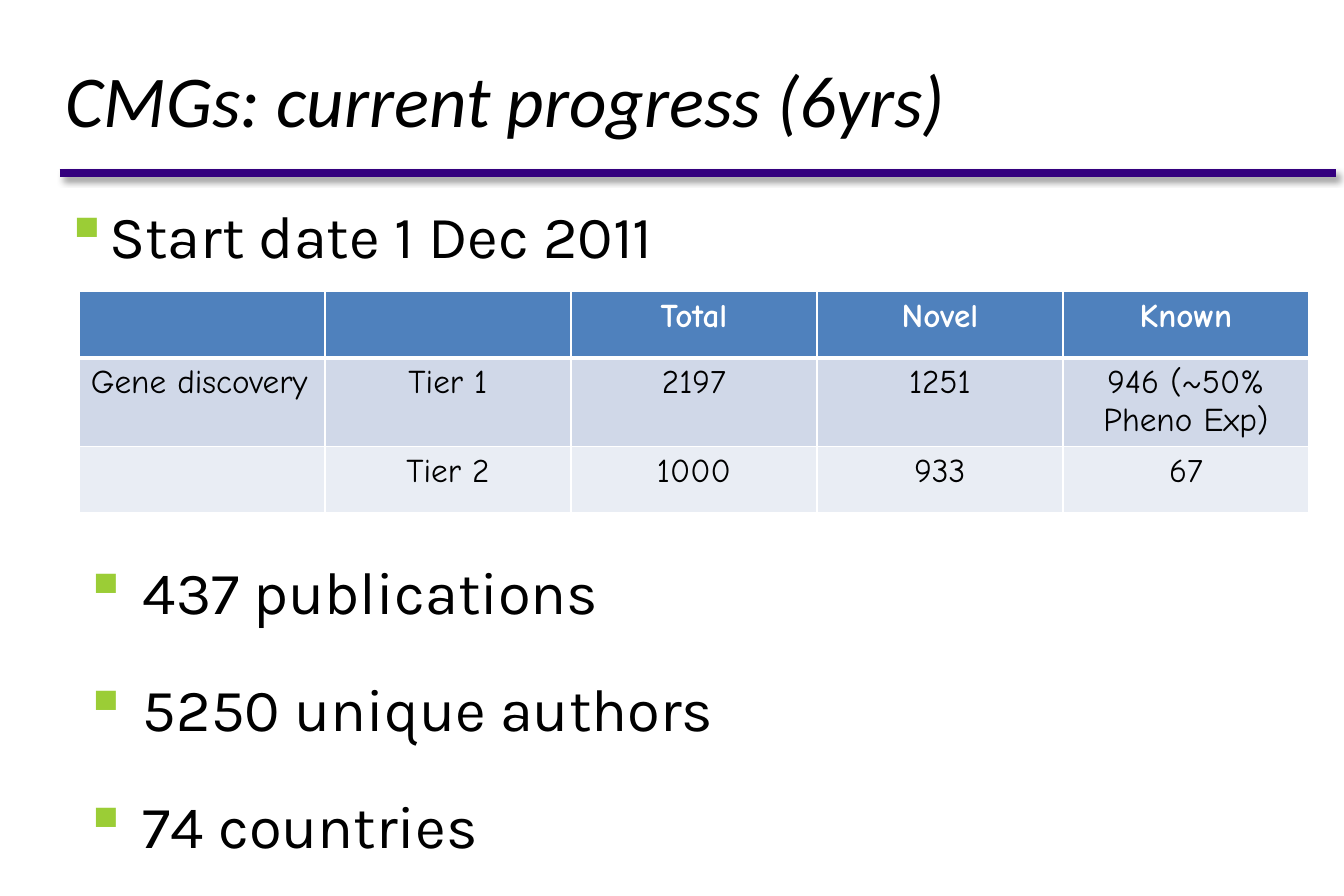
from dataclasses import dataclass
from typing import Any

import lxml.etree
import pptx
import pptx.dml.color
import pptx.enum.shapes
import pptx.enum.text
import pptx.oxml
import pptx.oxml.ns
import pptx.util

Pt = pptx.util.Pt
RGBColor = pptx.dml.color.RGBColor
Align = pptx.enum.text.PP_ALIGN
Anchor = pptx.enum.text.MSO_ANCHOR
qn = pptx.oxml.ns.qn

BLACK = RGBColor(0x00, 0x00, 0x00)
WHITE = RGBColor(0xFF, 0xFF, 0xFF)
RULE_PURPLE = RGBColor(0x34, 0x00, 0x7E)
BULLET_GREEN = RGBColor(0x9B, 0xCD, 0x36)
HEADER_BLUE = RGBColor(0x4F, 0x81, 0xBD)
TIER_1_BLUE = RGBColor(0xD0, 0xD8, 0xE8)
TIER_2_BLUE = RGBColor(0xE9, 0xED, 0xF4)

TITLE_FONT = {"name": "Calibri", "size": Pt(44), "italic": True}
BULLET_FONT = {"name": "Karla", "size": Pt(36)}
CELL_FONT = {"name": "Comic Neue", "size": Pt(20)}
BULLET_SPACING = {"line_spacing": Pt(42.6), "space_before": Pt(28)}
BULLET_HANG = 26.64
TABLE_LEFT, TABLE_TOP, COLUMN_WIDTH = 47.5, 175.7, 148.3


@dataclass(frozen=True)
class TextBlock:
    left: float
    top: float
    width: float
    height: float
    lines: tuple[str, ...]
    font: dict[str, Any]
    anchor: Any = Anchor.TOP
    bullet_indent: float = 0


@dataclass(frozen=True)
class TableRow:
    height: float
    fill: RGBColor
    texts: tuple[str, ...]
    color: RGBColor = BLACK
    bold: bool = False
    top_border: float = 1
    bottom_border: float = 1


TEXT_BLOCKS = (
    TextBlock(36, 14.4, 774, 90, ("CMGs: current progress (6yrs)",), TITLE_FONT, Anchor.MIDDLE),
    TextBlock(35.3, 116.6, 779, 57.6, ("Start date 1 Dec 2011",), BULLET_FONT,
              bullet_indent=BULLET_HANG),
    TextBlock(46.8, 331.2, 779, 57.6,
              ("437 publications", "5250 unique authors", "74 countries"), BULLET_FONT,
              bullet_indent=BULLET_HANG + 9),
)

TABLE_ROWS = (
    TableRow(40, HEADER_BLUE, ("", "", "Total", "Novel", "Known"), WHITE, True, bottom_border=3),
    TableRow(53, TIER_1_BLUE,
             ("Gene discovery", "Tier 1", "2197", "1251", "946 (~50% Pheno Exp)"), top_border=3),
    TableRow(40, TIER_2_BLUE, ("", "Tier 2", "1000", "933", "67")),
)


def set_attributes(target: Any, values: dict[str, Any]) -> None:
    for name, value in values.items():
        setattr(target, name, value)


def add_child(parent: Any, tag: str, **attributes: str) -> Any:
    return lxml.etree.SubElement(parent, qn(tag), attributes)


def set_bullet(paragraph: Any, indent: float) -> None:
    set_attributes(paragraph, BULLET_SPACING)
    properties = paragraph._p.get_or_add_pPr()
    properties.set("marL", str(Pt(indent)))
    properties.set("indent", str(-Pt(indent)))
    color = add_child(properties, "a:buClr")
    add_child(color, "a:srgbClr", val=str(BULLET_GREEN))
    add_child(properties, "a:buChar", char="▪")


def add_text_block(slide: Any, block: TextBlock) -> None:
    shape = slide.shapes.add_textbox(
        Pt(block.left), Pt(block.top), Pt(block.width), Pt(block.height))
    frame = shape.text_frame
    margins = dict.fromkeys(
        ("margin_left", "margin_top", "margin_right", "margin_bottom"), Pt(3.6))
    set_attributes(frame, {"word_wrap": True, "vertical_anchor": block.anchor, **margins})
    frame.text = "\n".join(block.lines)
    for paragraph in frame.paragraphs:
        set_attributes(paragraph.runs[0].font, block.font)
        paragraph.runs[0].font.color.rgb = BLACK
        if block.bullet_indent:
            set_bullet(paragraph, block.bullet_indent)


def add_title_rule(slide: Any) -> None:
    rule = slide.shapes.add_connector(
        pptx.enum.shapes.MSO_CONNECTOR.STRAIGHT, Pt(36), Pt(104.4), Pt(805), Pt(104.4))
    rule.line.color.rgb = RULE_PURPLE
    rule.line.width = Pt(4.5)
    effects = add_child(rule._element.spPr, "a:effectLst")
    shadow = add_child(effects, "a:outerShdw", blurRad=str(Pt(4)), dist=str(Pt(3)),
                       dir="2700000", rotWithShape="0")
    color = add_child(shadow, "a:srgbClr", val=str(BLACK))
    add_child(color, "a:alpha", val="43000")


def set_borders(cell: Any, row: TableRow) -> None:
    properties = cell._tc.get_or_add_tcPr()
    widths = {"a:lnL": 1, "a:lnR": 1, "a:lnT": row.top_border, "a:lnB": row.bottom_border}
    for tag, width in widths.items():
        border = add_child(properties, tag, w=str(Pt(width)))
        fill = add_child(border, "a:solidFill")
        add_child(fill, "a:srgbClr", val=str(WHITE))


def fill_cell(cell: Any, row: TableRow, text: str, alignment: Any) -> None:
    set_borders(cell, row)
    cell.fill.solid()
    cell.fill.fore_color.rgb = row.fill
    cell.text = text
    paragraph = cell.text_frame.paragraphs[0]
    paragraph.alignment = alignment
    set_attributes(paragraph.font, {**CELL_FONT, "bold": row.bold})
    for run in paragraph.runs:
        set_attributes(run.font, {**CELL_FONT, "bold": row.bold})
        run.font.color.rgb = row.color


def add_discovery_table(slide: Any) -> None:
    column_count = len(TABLE_ROWS[0].texts)
    height = sum(row.height for row in TABLE_ROWS)
    table = slide.shapes.add_table(
        len(TABLE_ROWS), column_count, Pt(TABLE_LEFT), Pt(TABLE_TOP),
        Pt(COLUMN_WIDTH * column_count), Pt(height)).table
    for column in table.columns:
        column.width = Pt(COLUMN_WIDTH)
    for row_index, row in enumerate(TABLE_ROWS):
        table.rows[row_index].height = Pt(row.height)
        for column_index, text in enumerate(row.texts):
            alignment = Align.CENTER if column_index else Align.LEFT
            fill_cell(table.cell(row_index, column_index), row, text, alignment)


def main() -> None:
    presentation = pptx.Presentation()
    set_attributes(presentation, {"slide_width": Pt(810), "slide_height": Pt(540)})
    slide = presentation.slides.add_slide(presentation.slide_layouts[6])
    add_title_rule(slide)
    add_discovery_table(slide)
    for block in TEXT_BLOCKS:
        add_text_block(slide, block)
    presentation.save("out.pptx")


if __name__ == "__main__":
    main()
